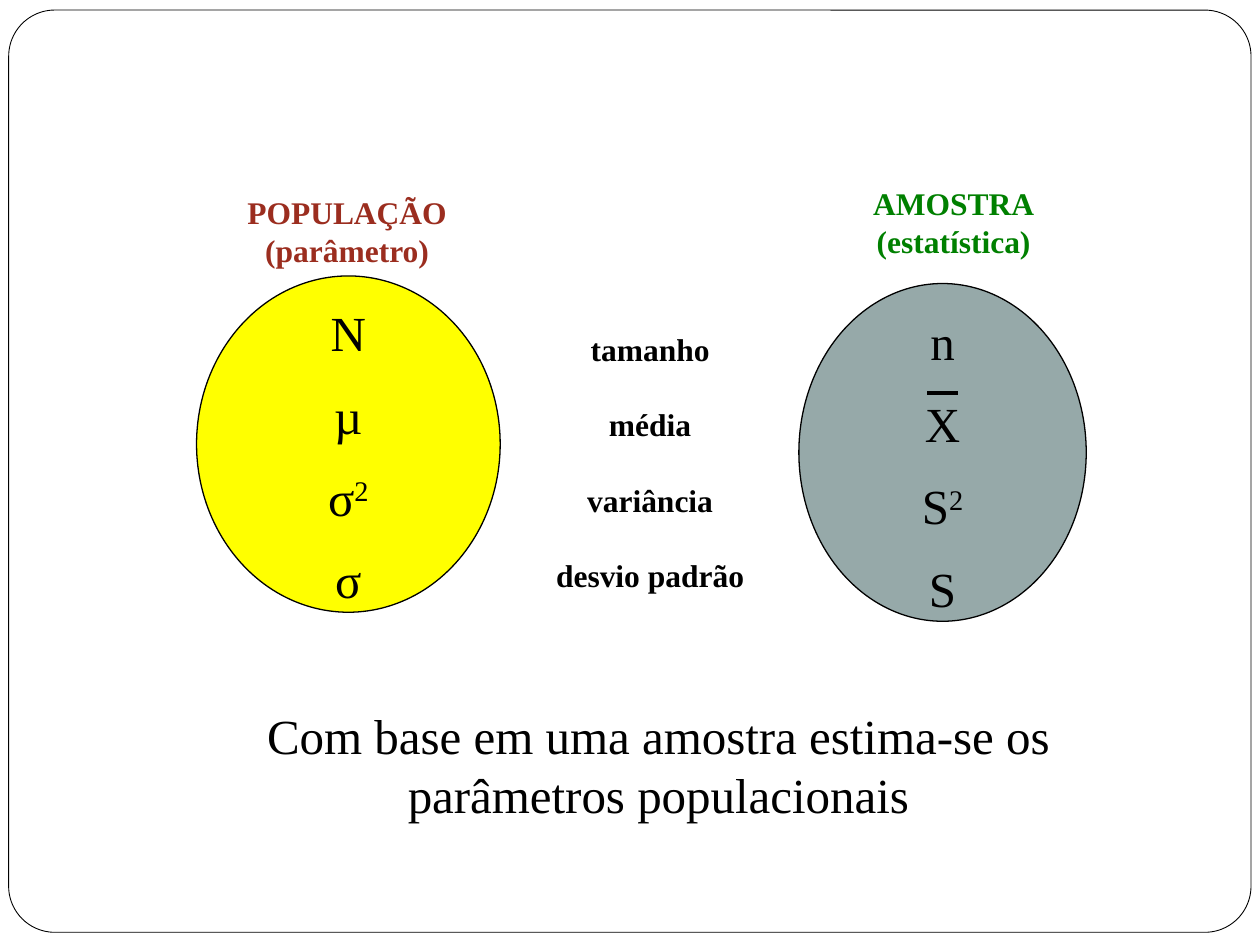
"""Build the slide that compares population parameters with sample statistics."""
from pptx import Presentation
from pptx.dml.color import RGBColor
from pptx.enum.shapes import MSO_CONNECTOR, MSO_SHAPE
from pptx.enum.text import MSO_ANCHOR, PP_ALIGN
from pptx.oxml.ns import qn
from pptx.util import Pt
from lxml.etree import SubElement

FONT = "Times New Roman"
COLORS = {
    "black": "000000", "white": "FFFFFF", "yellow": "FFFF00",
    "gray": "96A9A9", "green": "008000", "red": "9B2D1F",
}
FRAME = (5, 5.76, 709.9, 527)
ELLIPSES = [
    ((456.5, 162, 164.2, 193), "gray", ["n", "X", "S^2", "S"]),
    ((112.3, 157.7, 173.5, 192.2), "yellow", ["N", "µ", "σ^2", "σ"]),
]
LABELS = [
    ((483.8, 101.5, 122.4, 72.7), ["AMOSTRA", "(estatística)"], "green", 18, True, 0),
    ((133.2, 106.6, 130.3, 51.1), ["POPULAÇÃO", "(parâmetro)"], "red", 18, True, 0),
    ((110.2, 399.6, 532.1, 74.2),
     ["Com base em uma amostra estima-se os parâmetros populacionais"],
     "black", 28, False, 0),
    ((303.1, 185, 136.8, 158.4),
     ["tamanho", "média", "variância", "desvio padrão"], "black", 18, True, 21.5),
]
MEAN_BAR = (529.9, 547.2, 224.6)


def rgb(name):
    return RGBColor.from_string(COLORS[name])


def add_outline(s, kind, box, fill, width):
    sp = s.shapes.add_shape(kind, *map(Pt, box))
    sp.shadow.inherit = False
    sp.fill.solid()
    sp.fill.fore_color.rgb = rgb(fill)
    sp.line.color.rgb = rgb("black")
    sp.line.width = Pt(width)
    return sp


def write_lines(tf, lines, color, size, bold=False, gap=0, spacing=1.0):
    for i, line in enumerate(lines):
        p = tf.paragraphs[0] if i == 0 else tf.add_paragraph()
        p.alignment = PP_ALIGN.CENTER
        p.line_spacing = spacing
        p.space_before = Pt(gap if i else 0)
        for level, text in enumerate(line.split("^")):
            r = p.add_run()
            r.text = text
            r.font.name = FONT
            r.font.size = Pt(size)
            r.font.bold = bold
            r.font.color.rgb = rgb(color)
            if level:
                r.font._element.set("baseline", "30000")


def main():
    prs = Presentation()
    prs.slide_width, prs.slide_height = Pt(720), Pt(540)
    s = prs.slides.add_slide(prs.slide_layouts[6])

    frame = add_outline(s, MSO_SHAPE.ROUNDED_RECTANGLE, FRAME, "white", 0.5)
    frame.adjustments[0] = 0.05

    for box, fill, symbols in ELLIPSES:
        sp = add_outline(s, MSO_SHAPE.OVAL, box, fill, 0.75)
        tf = sp.text_frame
        tf.word_wrap = False
        tf.vertical_anchor = MSO_ANCHOR.MIDDLE
        write_lines(tf, symbols, "black", 28, spacing=1.4)

    for box, lines, color, size, bold, gap in LABELS:
        tf = s.shapes.add_textbox(*map(Pt, box)).text_frame
        tf.word_wrap = True
        write_lines(tf, lines, color, size, bold, gap)

    left, right, y = map(Pt, MEAN_BAR)
    bar = s.shapes.add_connector(MSO_CONNECTOR.STRAIGHT, left, y, right, y)
    bar.line.color.rgb = rgb("black")
    bar.line.width = Pt(2.25)
    SubElement(bar._element.spPr, qn("a:effectLst"))

    prs.save("out.pptx")


if __name__ == "__main__":
    main()
